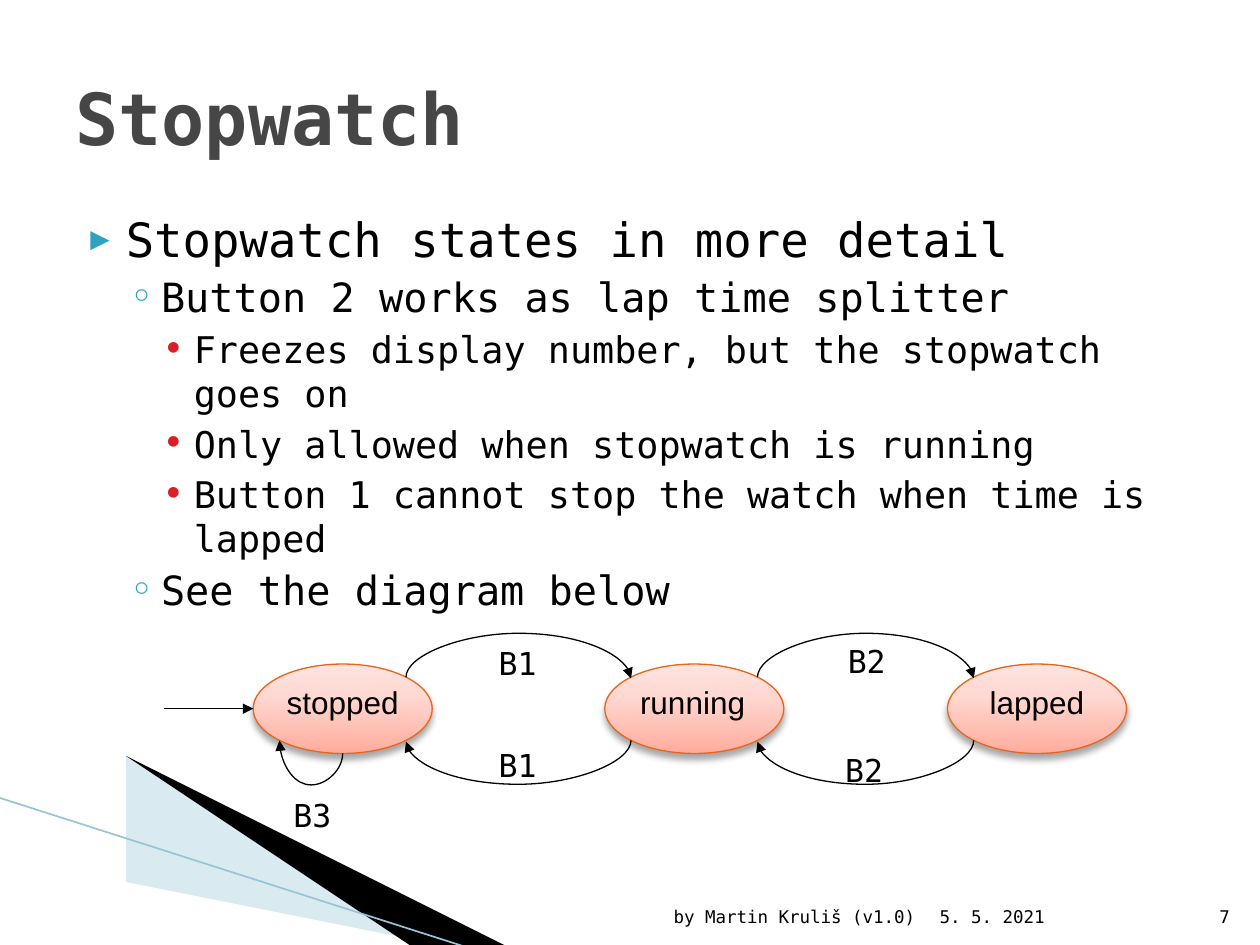
from lxml.etree import SubElement
from pptx import Presentation
from pptx.dml.color import RGBColor
from pptx.enum.shapes import MSO_CONNECTOR as Connector, MSO_SHAPE as Shape
from pptx.enum.text import MSO_ANCHOR as Anchor, MSO_AUTO_SIZE as AutoSize, PP_ALIGN as Align
from pptx.oxml import parse_xml
from pptx.oxml.ns import nsdecls, qn
from pptx.util import Inches, Pt

WIDTH, HEIGHT = 10, 7.5
MONO, SANS = "DejaVu Sans Mono", "Arial"
BLACK = "000000"

# level: indent, hanging, space before, bullet, bullet colour, bullet size %, text size
LEVELS = [
    (0.4, 0.28, 4, "▶", "2DA2BF", 68, 27),
    (0.68, 0.25, 3.2, "◦", "2DA2BF", 100, 23),
    (0.94, 0.25, 3.5, "•", "DA1F28", 100, 21),
]
BULLETS = [
    (0, "Stopwatch states in more detail"),
    (1, "Button 2 works as lap time splitter"),
    (2, "Freezes display number, but the stopwatch goes on"),
    (2, "Only allowed when stopwatch is running"),
    (2, "Button 1 cannot stop the watch when time is lapped"),
    (1, "See the diagram below"),
]


def color(value):
    return RGBColor.from_string(value)


def style(para, size, name=MONO, tint=BLACK, bold=False):
    for run in para.runs:
        font = run.font
        font.size, font.name, font.bold = Pt(size), name, bold
        font.color.rgb = color(tint)


def add_text(page, box, text, size, tint=BLACK, bold=False, align=Align.LEFT,
             anchor=Anchor.TOP, wrap=True):
    frame = page.shapes.add_textbox(*map(Inches, box)).text_frame
    frame.word_wrap, frame.vertical_anchor = wrap, anchor
    if not wrap:
        frame.auto_size = AutoSize.SHAPE_TO_FIT_TEXT
    frame.text = text
    para = frame.paragraphs[0]
    para.alignment = align
    style(para, size, MONO, tint, bold)


def add_bullet(para, level, text, first):
    indent, hanging, before, mark, tint, scale, size = LEVELS[level]
    para.text = text
    para.level = level
    para.space_before = Pt(0 if first else before)
    props = para._p.get_or_add_pPr()
    props.set("marL", str(Inches(indent)))
    props.set("indent", str(-Inches(hanging)))
    bullet_color = SubElement(props, qn("a:buClr"))
    SubElement(bullet_color, qn("a:srgbClr"), val=tint)
    SubElement(props, qn("a:buSzPct"), val=str(scale * 1000))
    SubElement(props, qn("a:buFont"), typeface=MONO)
    SubElement(props, qn("a:buChar"), char=mark)
    style(para, size)


def add_body(page, box):
    frame = page.shapes.add_textbox(*map(Inches, box)).text_frame
    frame.word_wrap = True
    for index, (level, text) in enumerate(BULLETS):
        para = frame.add_paragraph() if index else frame.paragraphs[0]
        add_bullet(para, level, text, index == 0)


def add_line(page, kind, start, end, tint=BLACK, width=0.75, arrow=True):
    line = page.shapes.add_connector(kind, *map(Inches, (*start, *end)))
    line.line.color.rgb = color(tint)
    line.line.width = Pt(width)
    if arrow:
        SubElement(line.line._get_or_add_ln(), qn("a:tailEnd"), type="triangle")
    SubElement(line._element.spPr, qn("a:effectLst"))
    return line


def add_arc(page, start, end, peak):
    """Curved arrow that leaves and arrives vertically, bulging to height peak."""
    (x0, y0), (x1, y1) = start, end
    if abs(y1 - y0) < 0.01:
        y1 = y0 + 0.01
    rise, run = y1 - y0, x1 - x0
    line = add_line(page, Connector.CURVE, start, (x1, y1))
    # The preset curve runs sideways, so it is turned a quarter about its centre
    line.width, line.height = Inches(abs(rise)), Inches(abs(run))
    line.left = Inches((x0 + x1 - abs(rise)) / 2)
    line.top = Inches((y0 + y1 - abs(run)) / 2)
    props = line._element.spPr
    frame = props.find(qn("a:xfrm"))
    frame.set("rot", str(90 * 60000))
    frame.set("flipH", str(int(rise < 0)))
    frame.set("flipV", str(int(run > 0)))
    guides = props.find(qn("a:prstGeom")).find(qn("a:avLst"))
    share = round((peak - y0) / rise * 100000)
    SubElement(guides, qn("a:gd"), name="adj1", fmla=f"val {share}")


def add_wedge(page, points, tint, opacity=100):
    builder = page.shapes.build_freeform(*points[0], scale=Inches(1))
    builder.add_line_segments(points[1:], close=True)
    wedge = builder.convert_to_shape()
    wedge.shadow.inherit = False
    wedge.fill.solid()
    wedge.fill.fore_color.rgb = color(tint)
    wedge.line.fill.background()
    if opacity < 100:
        tone = wedge._element.spPr.find(qn("a:solidFill")).find(qn("a:srgbClr"))
        SubElement(tone, qn("a:alpha"), val=str(opacity * 1000))


def add_decoration(page):
    add_wedge(page, [(0.55, 6.51), (5.95, 7.51), (4.56, 7.51), (0.55, 6.5)], "A0CBDC", 40)
    add_wedge(page, [(0.53, 6.49), (4.57, 7.51), (3.72, 7.52), (0.54, 6.5)], BLACK)
    add_line(page, Connector.STRAIGHT, (-0.01, 6.33), (3.71, 7.52), "97C5D8", 0.95, False)


def add_state(page, box, text, align):
    state = page.shapes.add_shape(Shape.OVAL, *map(Inches, box))
    state.line.color.rgb = color("EB641B")
    state.line.width = Pt(0.75)
    props = state._element.spPr
    stops = "".join(
        f'<a:gs pos="{place * 1000}"><a:srgbClr val="{tint}"/></a:gs>'
        for place, tint in [(0, "FFAC9C"), (65, "FFD8D2"), (100, "FFE4DF")])
    props.find(qn("a:prstGeom")).addnext(parse_xml(
        f'<a:gradFill {nsdecls("a")} rotWithShape="1"><a:gsLst>{stops}</a:gsLst>'
        '<a:lin ang="16200000" scaled="0"/></a:gradFill>'))
    props.append(parse_xml(
        f'<a:effectLst {nsdecls("a")}><a:outerShdw blurRad="{Pt(4)}" dist="{Pt(3)}" '
        'dir="5400000" rotWithShape="0"><a:srgbClr val="000000"><a:alpha val="35000"/>'
        '</a:srgbClr></a:outerShdw></a:effectLst>'))
    frame = state.text_frame
    frame.word_wrap, frame.vertical_anchor = False, Anchor.TOP
    frame.text = text
    frame.paragraphs[0].alignment = align
    style(frame.paragraphs[0], 18, SANS)


def add_diagram(page, top):
    wide, high = 1.42, 0.71
    middle, bottom = top + high / 2, top + high
    states = [("stopped", 2.01, Align.CENTER), ("running", 4.8, Align.RIGHT),
              ("lapped", 7.52, Align.CENTER)]
    for text, left, align in states:
        add_state(page, (left, top, wide, high), text, align)
    centers = [left + wide / 2 for _, left, _ in states]
    # Arrows meet the ellipses at 45 degrees
    dx, dy = wide / 2 * 0.707, high / 2 * 0.707
    upper, lower = middle - dy, middle + dy

    # Entry arrow and reset loop
    first = centers[0]
    add_line(page, Connector.STRAIGHT, (1.3, middle), (states[0][1], middle))
    add_arc(page, (first, bottom), (first - dx, lower), bottom + 0.25)

    # Forward and backward transitions between neighbours
    for here, there in zip(centers, centers[1:]):
        add_arc(page, (here + dx, upper), (there - dx, upper), top - 0.25)
        add_arc(page, (there - dx, lower), (here + dx, lower), bottom + 0.25)

    # Button labels
    for text, left, label_top in [("B1", 3.86, 5.06), ("B1", 3.86, 5.87), ("B2", 6.63, 5.05),
                                  ("B2", 6.61, 5.91), ("B3", 2.23, 6.27)]:
        add_text(page, (left, label_top, 0.51, 0.4), text, 18, wrap=False)


def add_footer(page, top):
    for text, left, width, align in [("by Martin Kruliš (v1.0)", 4.79, 2.57, Align.RIGHT),
                                     ("5. 5. 2021", 7.36, 2.1, Align.LEFT),
                                     ("7", 9.46, 0.4, Align.RIGHT)]:
        add_text(page, (left, top, width, 0.4), text, 10, align=align, anchor=Anchor.BOTTOM)


def main():
    deck = Presentation()
    deck.slide_width, deck.slide_height = Inches(WIDTH), Inches(HEIGHT)
    page = deck.slides.add_slide(deck.slide_layouts[6])
    margin = WIDTH * 0.05
    inner = WIDTH - 2 * margin
    add_decoration(page)
    add_text(page, (margin, 0.3, inner, 1.25), "Stopwatch", 41, "464646", True,
             anchor=Anchor.MIDDLE)
    add_body(page, (margin, 1.62, inner, 4.95))
    add_diagram(page, 5.27)
    add_footer(page, 7.01)
    deck.save("out.pptx")


if __name__ == "__main__":
    main()
